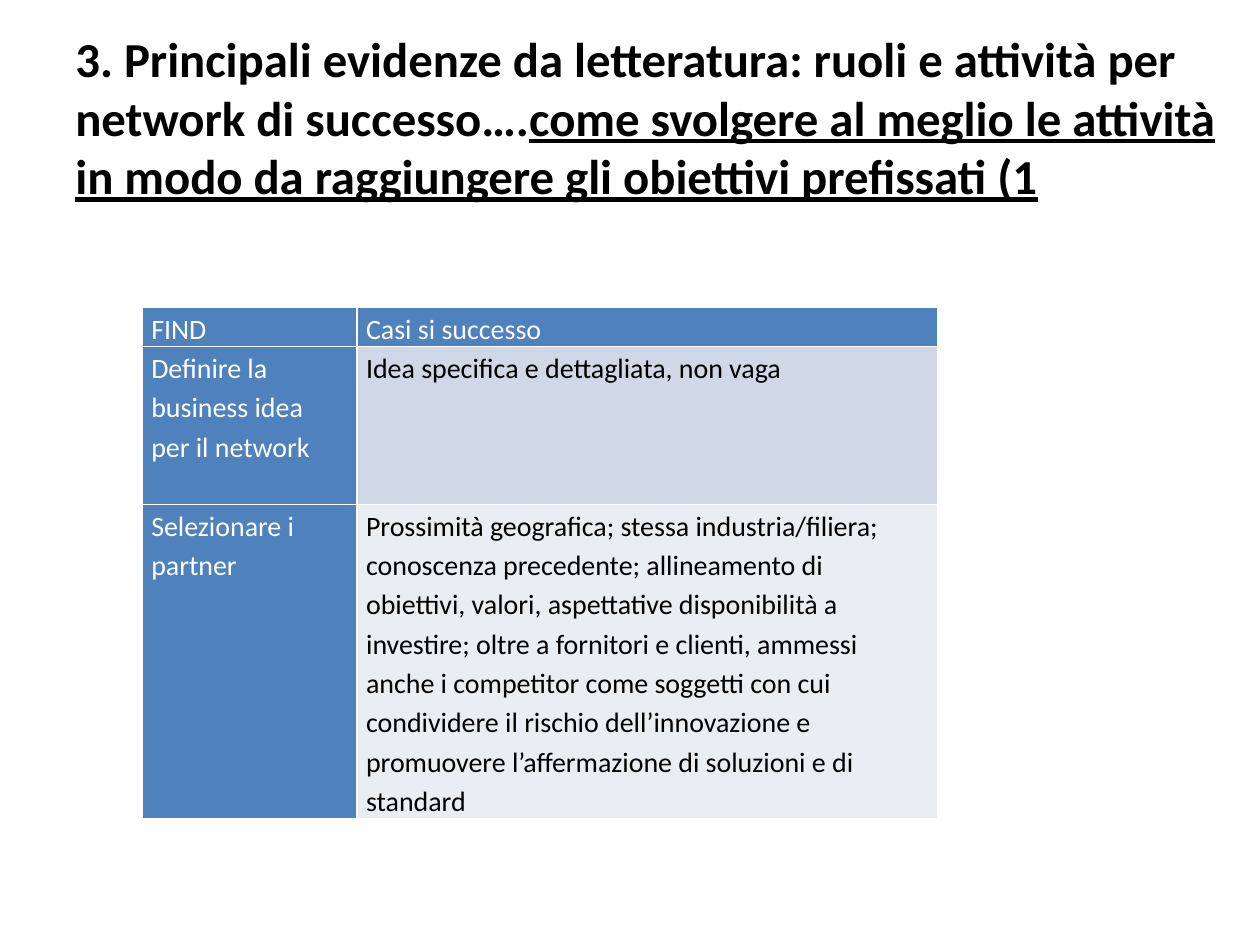
from lxml import etree
from pptx import Presentation
from pptx.dml.color import RGBColor
from pptx.enum.text import MSO_ANCHOR
from pptx.oxml.ns import qn
from pptx.util import Cm, Pt

MIDDLE = MSO_ANCHOR.MIDDLE
BLACK = RGBColor(0x00, 0x00, 0x00)
WHITE = RGBColor(0xFF, 0xFF, 0xFF)
BLUE = RGBColor(0x4F, 0x81, 0xBD)
BAND_DARK = RGBColor(0xD0, 0xD8, 0xE8)
BAND_LIGHT = RGBColor(0xE9, 0xED, 0xF4)

TITLE = "3. Principali evidenze da letteratura: ruoli e attività per network di successo…."
TITLE_UNDERLINED = (
    "come svolgere al meglio le attività in modo da raggiungere gli obiettivi prefissati (1"
)
COLUMN_WIDTHS = (4.33, 11.7)
ROW_HEIGHTS = (0.79, 3.18, 6.33)
ROWS = (
    ("FIND", "Casi si successo"),
    ("Definire la business idea per il network", "Idea specifica e dettagliata, non vaga"),
    (
        "Selezionare i partner",
        "Prossimità geografica; stessa industria/filiera; conoscenza precedente; "
        "allineamento di obiettivi, valori, aspettative disponibilità a investire; "
        "oltre a fornitori e clienti, ammessi anche i competitor come soggetti con cui "
        "condividere il rischio dell’innovazione e promuovere l’affermazione di "
        "soluzioni e di standard",
    ),
)
ROW_FILLS = (BLUE, BAND_DARK, BAND_LIGHT)


def add_text(p, text, size=16, color=BLACK, bold=False, underline=False, spacing=1.0):
    """Add a formatted run to a paragraph."""
    p.line_spacing = spacing
    r = p.add_run()
    r.text = text
    r.font.name = "Calibri"
    r.font.size = Pt(size)
    r.font.bold = bold
    r.font.underline = underline
    r.font.color.rgb = color


def set_borders(cell, width=1):
    """Draw white lines around a table cell."""
    tc_pr = cell._tc.get_or_add_tcPr()
    for side in "LRTB":
        ln = etree.SubElement(tc_pr, qn(f"a:ln{side}"), w=str(Pt(width)))
        fill = etree.SubElement(ln, qn("a:solidFill"))
        etree.SubElement(fill, qn("a:srgbClr"), val=str(WHITE))


def add_title(s, left, top, width, height):
    """Place the slide title with its underlined ending."""
    tf = s.shapes.add_textbox(left, top, width, height).text_frame
    tf.word_wrap = True
    tf.vertical_anchor = MIDDLE
    p = tf.paragraphs[0]
    add_text(p, TITLE, size=27.9, bold=True)
    add_text(p, TITLE_UNDERLINED, size=27.9, bold=True, underline=True)


def add_success_table(s, left, top, width, height):
    """Place the table of activities and success cases."""
    table = s.shapes.add_table(len(ROWS), len(COLUMN_WIDTHS), left, top, width, height).table
    table.first_row = False
    table.horz_banding = False
    for column, share in zip(table.columns, COLUMN_WIDTHS):
        column.width = int(width * share / sum(COLUMN_WIDTHS))
    for i, (row, share) in enumerate(zip(table.rows, ROW_HEIGHTS)):
        row.height = int(height * share / sum(ROW_HEIGHTS))
        for j, cell in enumerate(row.cells):
            heading = i == 0 or j == 0
            cell.margin_left, cell.margin_right = Cm(0.18), Cm(0.6)
            cell.margin_top = cell.margin_bottom = 0
            set_borders(cell)
            cell.fill.solid()
            cell.fill.fore_color.rgb = BLUE if heading else ROW_FILLS[i]
            p = cell.text_frame.paragraphs[0]
            add_text(p, ROWS[i][j], color=WHITE if heading else BLACK, spacing=1.15)


def main():
    """Build the slide and save it."""
    prs = Presentation()
    prs.slide_width, prs.slide_height = Cm(25.4), Cm(19.05)
    s = prs.slides.add_slide(prs.slide_layouts[6])
    add_title(s, Cm(1.27), Cm(0.76), Cm(23.83), Cm(3.18))
    add_success_table(s, Cm(2.87), Cm(6.2), Cm(sum(COLUMN_WIDTHS)), Cm(sum(ROW_HEIGHTS)))
    prs.save("out.pptx")


if __name__ == "__main__":
    main()
